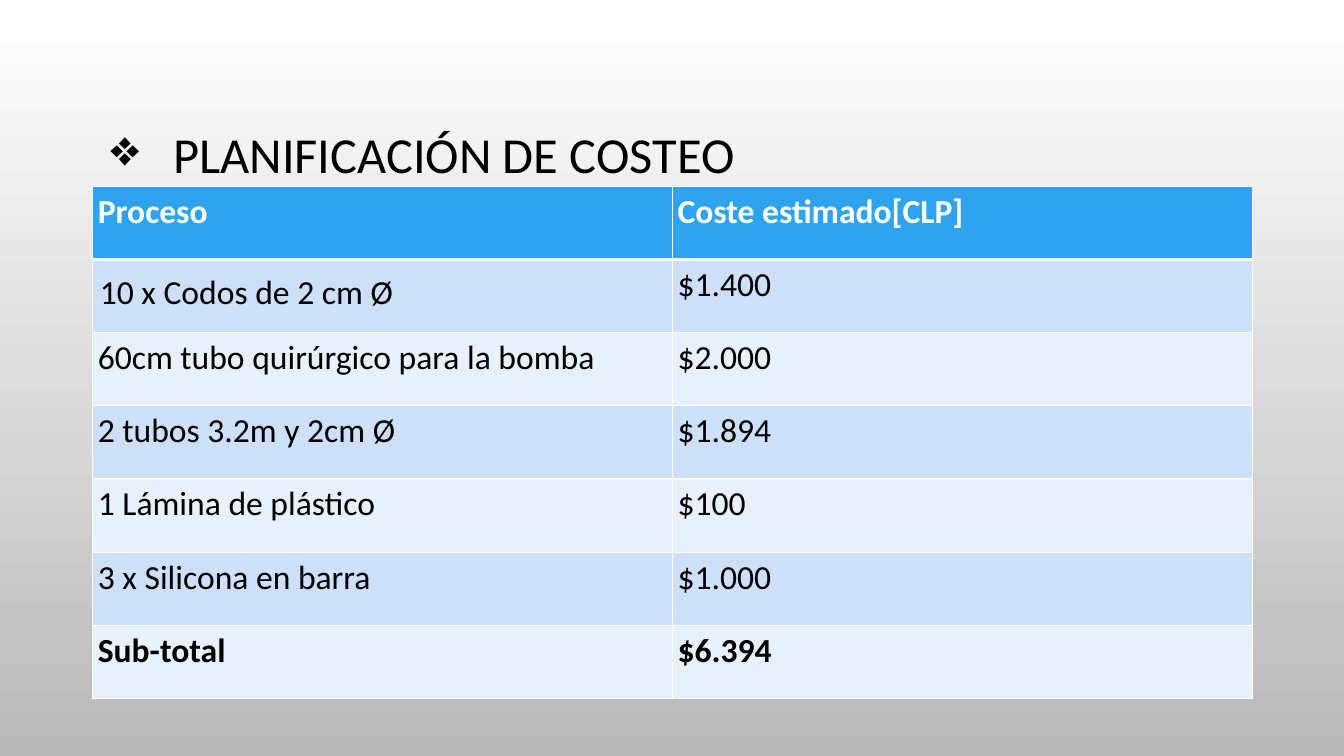
from lxml.etree import SubElement
from pptx import Presentation
from pptx.dml.color import RGBColor
from pptx.enum.text import MSO_ANCHOR
from pptx.oxml import parse_xml
from pptx.oxml.ns import nsdecls, qn
from pptx.util import Inches, Pt

WHITE = RGBColor(0xFF, 0xFF, 0xFF)
BLACK = RGBColor(0, 0, 0)
GREY = RGBColor(0xB9, 0xB9, 0xB9)
HEADER_BLUE = RGBColor(0x2F, 0xA3, 0xEE)
BAND_DARK = RGBColor(0xCD, 0xE0, 0xF8)
BAND_LIGHT = RGBColor(0xE8, 0xF0, 0xFC)

FONT = "Calibri"
SLIDE_W, SLIDE_H = Inches(13.33), Inches(7.5)
COL_W, ROW_H = Inches(5.75), Inches(5.08 / 7)

COSTS = [
    ("Proceso", "Coste estimado[CLP]"),
    ("10 x Codos de 2 cm Ø", "$1.400"),
    ("60cm tubo quirúrgico para la bomba", "$2.000"),
    ("2 tubos 3.2m y 2cm Ø", "$1.894"),
    ("1 Lámina de plástico", "$100"),
    ("3 x Silicona en barra", "$1.000"),
    ("Sub-total", "$6.394"),
]
HEADER, FIRST_ITEM, TOTAL = 0, 1, len(COSTS) - 1


def set_font(paragraph, size, color, bold=False):
    font = paragraph.font
    font.name, font.size, font.bold = FONT, Pt(size), bold
    font.color.rgb = color


def paint_background(slide):
    fill = slide.background.fill
    fill.gradient()
    fill.gradient_angle = 270
    for stop, color in zip(fill.gradient_stops, (WHITE, GREY)):
        stop.color.rgb = color


def add_title(slide, text):
    box = slide.shapes.add_textbox(Inches(1), Inches(0.68), Inches(11.33), Inches(1.75))
    frame = box.text_frame
    frame.word_wrap = True
    frame.vertical_anchor = MSO_ANCHOR.MIDDLE
    title = frame.paragraphs[0]
    title.text = text
    title.line_spacing = 0.9
    # Diamond bullet with a hanging indent
    props = title._p.get_or_add_pPr()
    props.set("marL", str(Inches(0.62)))
    props.set("indent", str(-Inches(0.62)))
    SubElement(props, qn("a:buChar"), char="❖")
    set_font(title, 36, BLACK)


def set_borders(cell, **widths):
    props = cell._tc.get_or_add_tcPr()
    for place, side in enumerate("LRTB"):
        width = Pt(widths.get(side, 1))
        props.insert(place, parse_xml(
            f'<a:ln{side} {nsdecls("a")} w="{width}"><a:solidFill>'
            f'<a:srgbClr val="{WHITE}"/></a:solidFill></a:ln{side}>'))


def fill_cell(cell, text, row, inset):
    cell.margin_left = cell.margin_right = Inches(inset)
    cell.margin_top = cell.margin_bottom = Inches(inset)
    cell.fill.solid()
    if row == HEADER:
        cell.fill.fore_color.rgb = HEADER_BLUE
        set_borders(cell, B=3)
    else:
        cell.fill.fore_color.rgb = BAND_DARK if row % 2 else BAND_LIGHT
        set_borders(cell, T=3 if row == FIRST_ITEM else 1)
    paragraph = cell.text_frame.paragraphs[0]
    paragraph.text = text
    set_font(paragraph, 24, WHITE if row == HEADER else BLACK, row in (HEADER, TOTAL))
    return paragraph


def add_cost_table(slide, costs):
    table = slide.shapes.add_table(
        len(costs), 2, Inches(0.92), Inches(1.85), COL_W * 2, ROW_H * len(costs)).table
    for column in table.columns:
        column.width = COL_W
    for row, texts in enumerate(costs):
        table.rows[row].height = ROW_H
        for col, text in enumerate(texts):
            # The first item is set a little looser than the rest
            loose = (row, col) == (FIRST_ITEM, 0)
            paragraph = fill_cell(table.cell(row, col), text, row, 0.07 if loose else 0.05)
            if loose:
                paragraph.line_spacing = 1.15
                paragraph.space_after = Pt(10)


def main():
    deck = Presentation()
    deck.slide_width, deck.slide_height = SLIDE_W, SLIDE_H
    slide = deck.slides.add_slide(deck.slide_layouts[6])
    paint_background(slide)
    add_title(slide, "PLANIFICACIÓN DE COSTEO")
    add_cost_table(slide, COSTS)
    deck.save("out.pptx")


if __name__ == "__main__":
    main()
